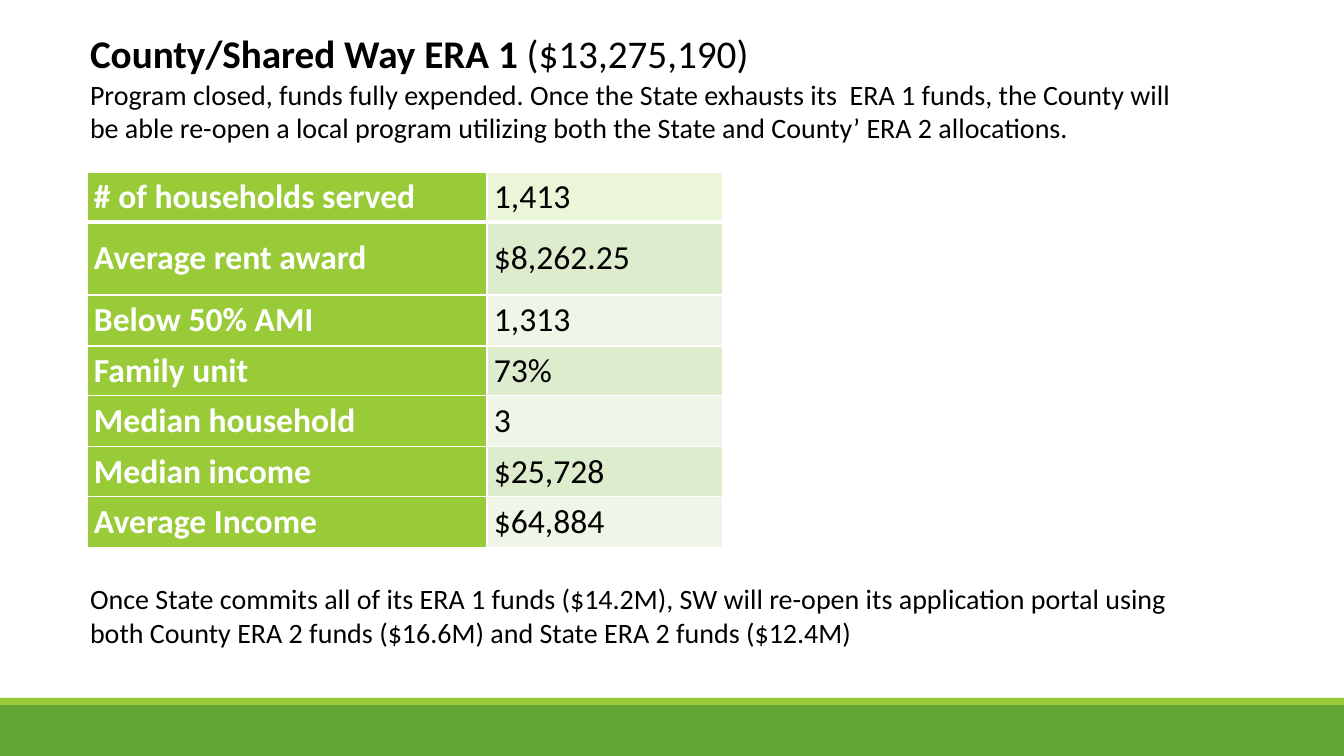
import pptx
import pptx.util
import pptx.dml.color
import pptx.enum.shapes
import pptx.enum.text
import pptx.oxml.ns
import lxml.etree

PX = 12192000 / 1344
WIDE, HIGH = 1344, 756
LIME, GREEN, WHITE, BLACK = "99CB38", "63A537", "FFFFFF", "000000"
PALE, TINTS = "EBF5D7", ("EFF6E8", "DEECCE")
ANCHOR = pptx.enum.text.MSO_ANCHOR
ROWS = [
    ("# of households served", "1,413", 50),
    ("Average rent award", "$8,262.25", 73),
    ("Below 50% AMI", "1,313", 51),
    ("Family unit", "73%", 50),
    ("Median household", "3", 51),
    ("Median income", "$25,728", 50),
    ("Average Income", "$64,884", 51),
]
INTRO = ("Program closed, funds fully expended. Once the State exhausts its  ERA 1 funds, "
         "the County will be able re-open a local program utilizing both the State and "
         "County’ ERA 2 allocations.")
NEXT = ("Once State commits all of its ERA 1 funds ($14.2M), SW will re-open its application "
        "portal using both County ERA 2 funds ($16.6M) and State ERA 2 funds ($12.4M)")


def emu(px):
    return pptx.util.Emu(round(px * PX))


def paint(item, color):
    item.solid()
    item.fore_color.rgb = pptx.dml.color.RGBColor.from_string(color)


def assign(item, values):
    for name, value in values.items():
        setattr(item, name, value)


def write(para, text, size, color=BLACK, bold=False):
    run = para.add_run()
    run.text = text
    assign(run.font, {"name": "Calibri", "size": pptx.util.Pt(size), "bold": bold})
    paint(run.font.fill, color)


def frame(shape, box):
    """Place a text shape in its box, without insets, and return its first paragraph."""
    assign(shape, dict(zip(("left", "top", "width", "height"), map(emu, box))))
    text = shape.text_frame
    assign(text, {"word_wrap": True, "auto_size": pptx.enum.text.MSO_AUTO_SIZE.NONE,
                  "vertical_anchor": ANCHOR.TOP, "margin_left": 0, "margin_right": 0,
                  "margin_top": 0, "margin_bottom": 0})
    para = text.paragraphs[0]
    para.alignment = pptx.enum.text.PP_ALIGN.LEFT
    return para


def head(slide, box):
    para = frame(slide.shapes.title, box)
    write(para, "County/Shared Way ERA 1 ", 28, bold=True)
    write(para, "($13,275,190)", 28)


def note(slide, box, text):
    shape = slide.shapes.add_textbox(*map(emu, box))
    write(frame(shape, box), text, 20)


def edge(cell, side, points):
    """Draw one white border of a cell."""
    props = cell._tc.get_or_add_tcPr()
    line = lxml.etree.SubElement(props, pptx.oxml.ns.qn("a:ln" + side),
                                 w=str(pptx.util.Pt(points)))
    fill = lxml.etree.SubElement(line, pptx.oxml.ns.qn("a:solidFill"))
    lxml.etree.SubElement(fill, pptx.oxml.ns.qn("a:srgbClr"), val=WHITE)


def facts(slide, box):
    table = slide.shapes.add_table(len(ROWS), 2, *map(emu, box)).table
    label = 400
    for col, width in zip(table.columns, (label, box[2] - label)):
        col.width = emu(width)
    for r, (name, value, height) in enumerate(ROWS):
        table.rows[r].height = emu(height)
        tint = TINTS[r % 2] if r else PALE
        looks = ((name, WHITE, True, LIME), (value, BLACK, False, tint))
        for c, (text, color, bold, fill) in enumerate(looks):
            cell = table.cell(r, c)
            assign(cell, {"vertical_anchor": ANCHOR.MIDDLE, "margin_left": emu(7),
                          "margin_right": emu(7), "margin_top": 0, "margin_bottom": 0})
            write(cell.text_frame.paragraphs[0], text, 24, color, bold)
            for side in "LRTB":
                thick = (r, side) in ((0, "B"), (1, "T"))
                edge(cell, side, 3 if thick else 1)
            paint(cell.fill, fill)


def footer(slide, box):
    left, top, width, height = box
    strip = 7
    bands = ((top, strip, LIME), (top + strip, height - strip, GREEN))
    for y, tall, color in bands:
        band = slide.shapes.add_shape(pptx.enum.shapes.MSO_SHAPE.RECTANGLE,
                                      *map(emu, (left, y, width, tall)))
        band.shadow.inherit = False
        paint(band.fill, color)
        band.line.fill.background()


def main():
    deck = pptx.Presentation()
    assign(deck, {"slide_width": emu(WIDE), "slide_height": emu(HIGH)})
    slide = deck.slides.add_slide(deck.slide_layouts[5])
    paint(slide.background.fill, WHITE)
    footer(slide, (0, 698, WIDE, HIGH - 698))
    head(slide, (90, 29, 1099, 48))
    note(slide, (90, 77, 1099, 68), INTRO)
    facts(slide, (87, 172, 636, 376))
    note(slide, (90, 582, 1099, 68), NEXT)
    deck.save("out.pptx")


if __name__ == "__main__":
    main()
